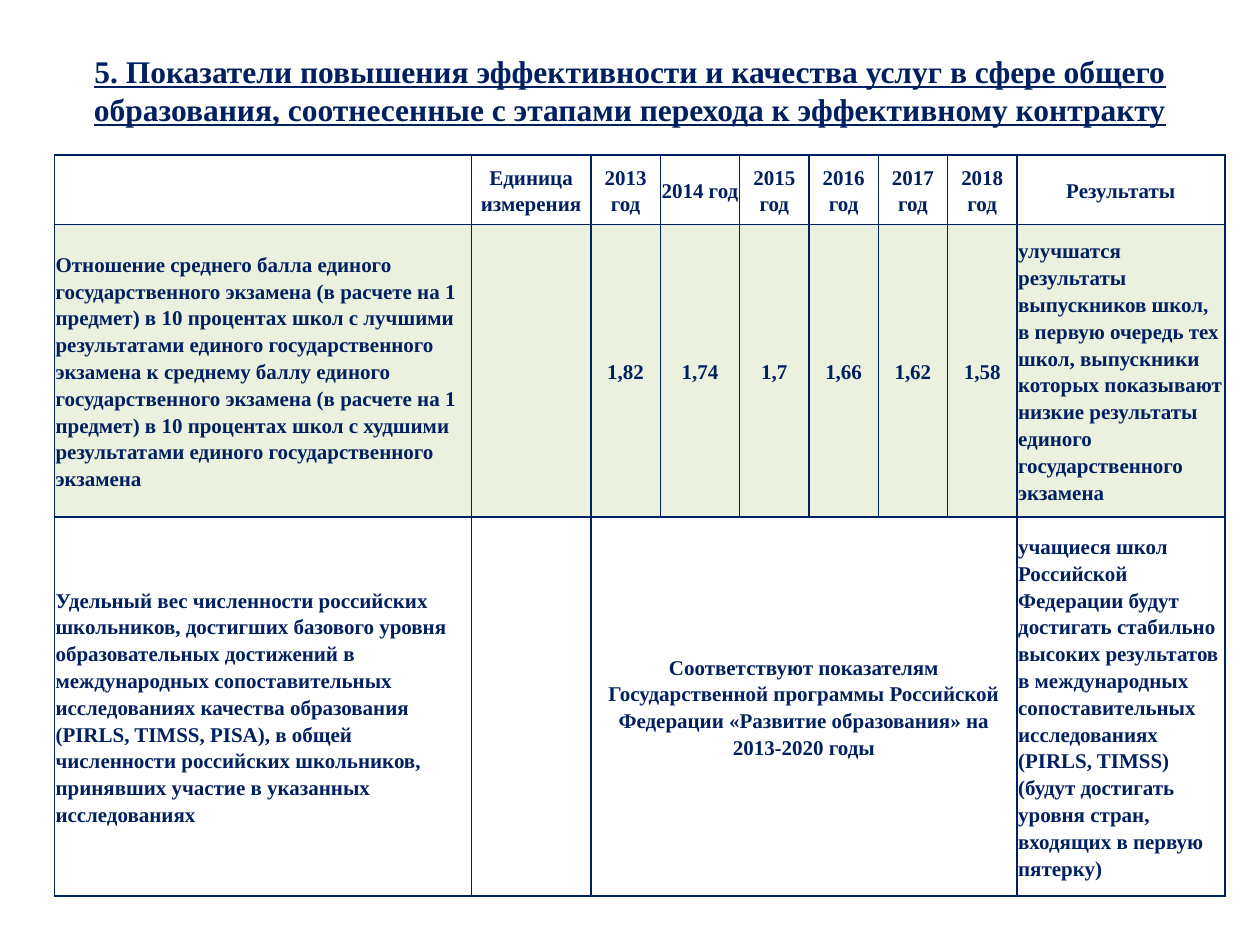
from lxml import etree
from pptx import Presentation
from pptx.dml.color import RGBColor
from pptx.enum.text import MSO_ANCHOR, PP_ALIGN
from pptx.oxml.ns import qn
from pptx.util import Pt

MIDDLE = MSO_ANCHOR.MIDDLE
LEFT, CENTER = PP_ALIGN.LEFT, PP_ALIGN.CENTER
COLORS = {"navy": "002060", "green": "EBF1DE"}
BASE = {"name": "Times New Roman", "bold": True}


def set_font(r, **values):
    for key, value in {**BASE, **values}.items():
        setattr(r.font, key, value)
    r.font.color.rgb = RGBColor.from_string(COLORS["navy"])


def add_borders(cell):
    tcPr = cell._tc.get_or_add_tcPr()
    for i, side in enumerate(("lnL", "lnR", "lnT", "lnB")):
        ln = etree.Element(qn(f"a:{side}"), w=str(Pt(1)))
        fill = etree.SubElement(ln, qn("a:solidFill"))
        etree.SubElement(fill, qn("a:srgbClr"), val=COLORS["navy"])
        tcPr.insert(i, ln)


prs = Presentation()
prs.slide_width, prs.slide_height = Pt(720), Pt(540)
s = prs.slides.add_slide(prs.slide_layouts[5])

# Title
title = s.shapes.title
title.left, title.top, title.width, title.height = Pt(0), Pt(26), Pt(720), Pt(51)
tf = title.text_frame
tf.word_wrap = True
tf.vertical_anchor = MIDDLE
p = tf.paragraphs[0]
p.alignment = CENTER
r = p.add_run()
r.text = ("5. Показатели повышения эффективности и качества услуг в сфере общего "
          "образования, соотнесенные с этапами перехода к эффективному контракту")
set_font(r, size=Pt(18), underline=True)

# Table contents
rows = [
    ["", "Единица измерения"] + [f"{year} год" for year in range(2013, 2019)]
    + ["Результаты"],
    ["Отношение среднего балла единого государственного экзамена (в расчете на 1 "
     "предмет) в 10 процентах школ с лучшими результатами единого государственного "
     "экзамена к среднему баллу единого государственного экзамена (в расчете на 1 "
     "предмет) в 10 процентах школ с худшими результатами единого государственного "
     "экзамена",
     "", "1,82", "1,74", "1,7", "1,66", "1,62", "1,58",
     "улучшатся результаты выпускников школ, в первую очередь тех школ, выпускники "
     "которых показывают низкие результаты единого государственного экзамена"],
    ["Удельный вес численности российских школьников, достигших базового уровня "
     "образовательных достижений в международных сопоставительных исследованиях "
     "качества образования (PIRLS, TIMSS, PISA), в общей численности российских "
     "школьников, принявших участие в указанных исследованиях",
     "",
     "Соответствуют показателям Государственной программы Российской Федерации "
     "«Развитие образования» на 2013-2020 годы",
     "", "", "", "", "",
     "учащиеся школ Российской Федерации будут достигать стабильно высоких "
     "результатов в международных сопоставительных исследованиях (PIRLS, TIMSS) "
     "(будут достигать уровня стран, входящих в первую пятерку)"],
]
col_widths = [238.3, 68.4, 39.6, 45.4, 39.6, 39.6, 39.6, 39.6, 118.8]
row_heights = [39.6, 167.3, 216.5]

# Table grid
table = s.shapes.add_table(len(rows), len(col_widths), Pt(31), Pt(88.6),
                           Pt(sum(col_widths)), Pt(sum(row_heights))).table
table.first_row = table.horz_banding = False
for col, width in zip(table.columns, col_widths):
    col.width = Pt(width)
for row, height in zip(table.rows, row_heights):
    row.height = Pt(height)
table.cell(2, 2).merge(table.cell(2, 7))

# Cell text, fills and borders
for i, texts in enumerate(rows):
    for j, text in enumerate(texts):
        cell = table.cell(i, j)
        cell.vertical_anchor = MIDDLE
        for side in ("left", "right", "top", "bottom"):
            setattr(cell, f"margin_{side}", Pt(0.75))
        if i == 1:
            cell.fill.solid()
            cell.fill.fore_color.rgb = RGBColor.from_string(COLORS["green"])
        else:
            cell.fill.background()
        add_borders(cell)
        if text:
            p = cell.text_frame.paragraphs[0]
            p.alignment = LEFT if i and j in (0, 8) else CENTER
            p.line_spacing = 1.15
            r = p.add_run()
            r.text = text
            set_font(r, size=Pt(12))

prs.save("out.pptx")
